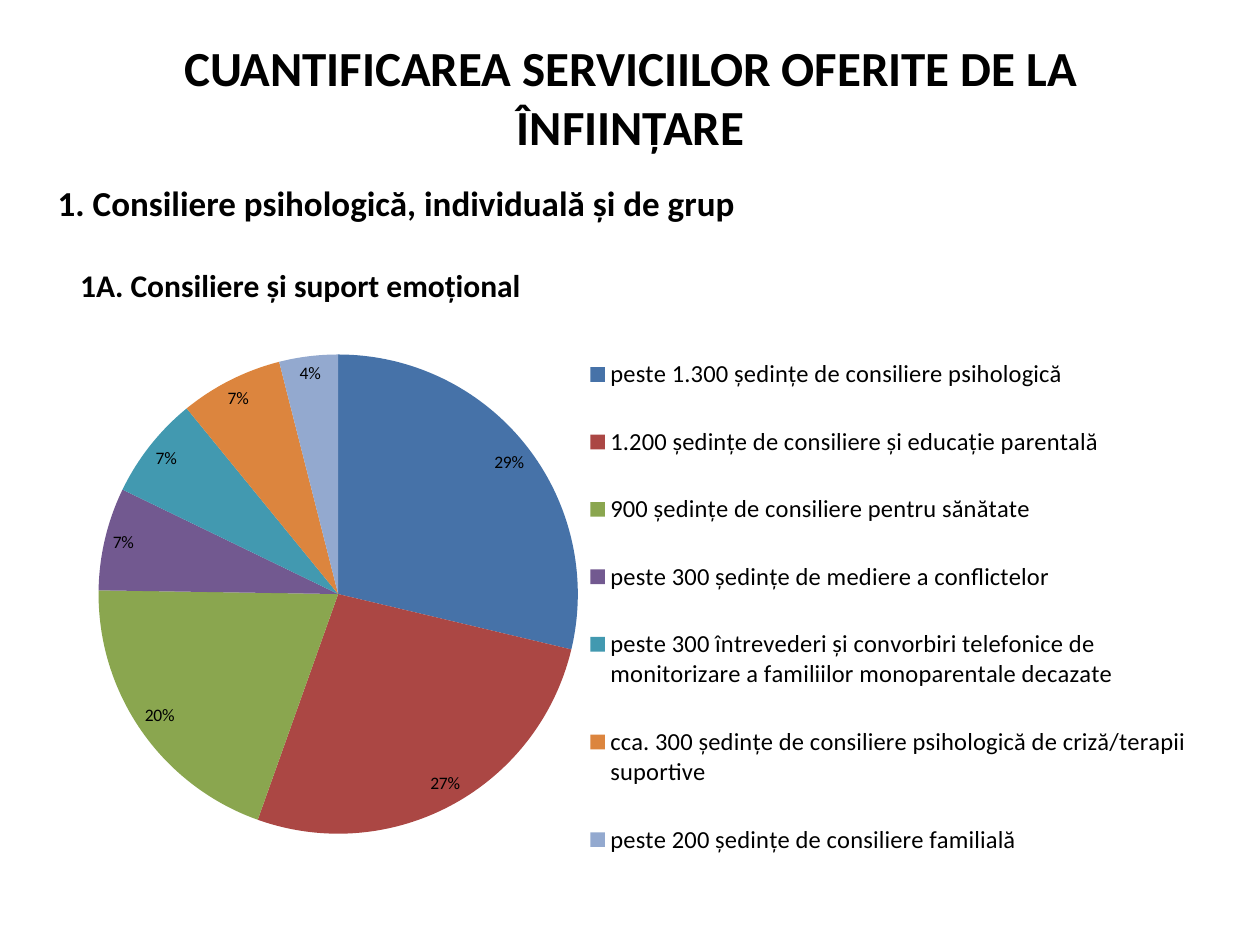
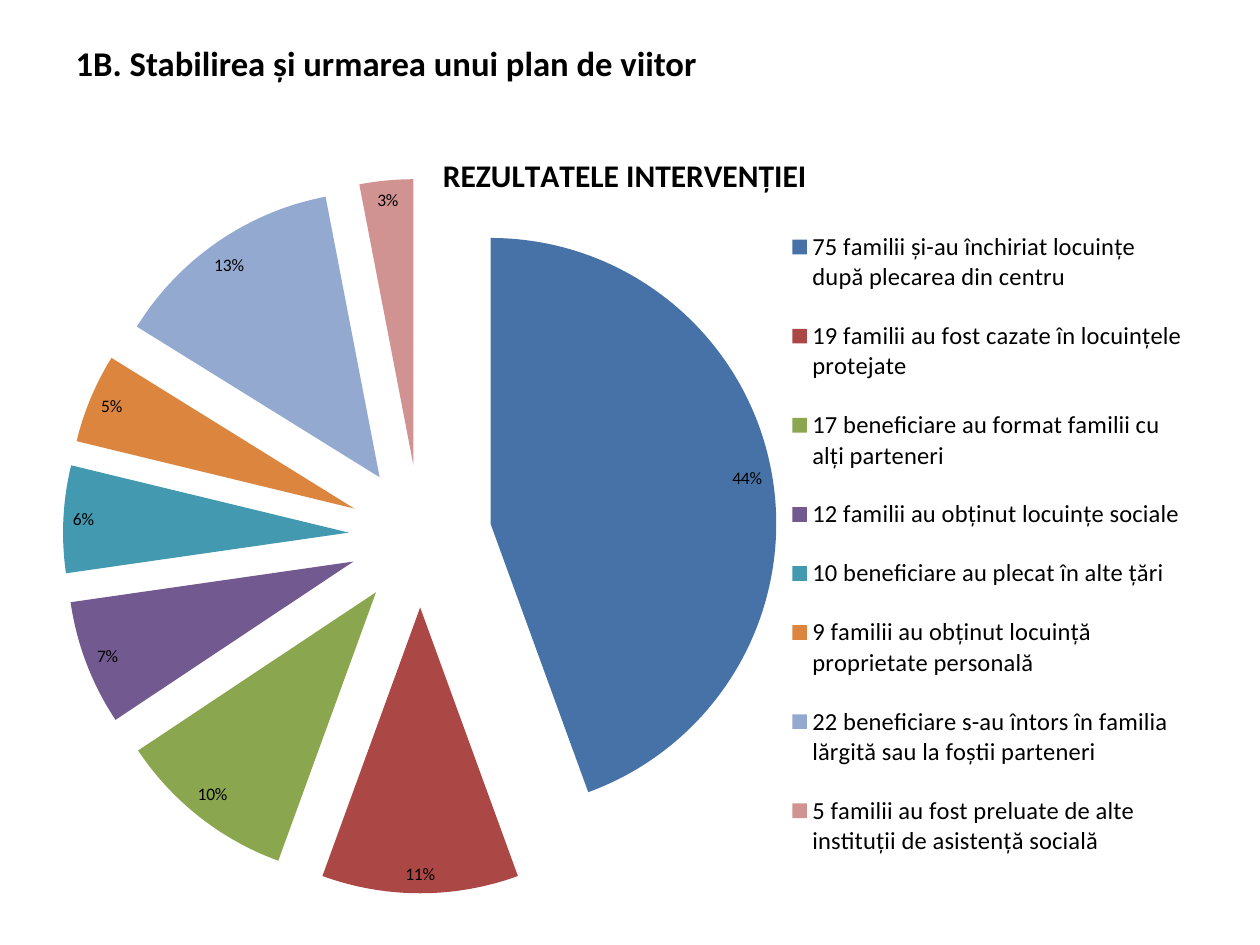
from dataclasses import dataclass

from lxml.etree import SubElement
from pptx import Presentation
from pptx.chart.data import CategoryChartData
from pptx.dml.color import RGBColor
from pptx.enum.chart import XL_CHART_TYPE, XL_LABEL_POSITION, XL_LEGEND_POSITION
from pptx.enum.lang import MSO_LANGUAGE_ID
from pptx.enum.text import MSO_ANCHOR, PP_ALIGN
from pptx.oxml.ns import qn
from pptx.util import Inches, Pt


@dataclass(frozen=True)
class Theme:
    font: str = "Calibri"
    text: str = "000000"
    slices: tuple = ("4672A8", "AB4744", "8AA64F", "725990",
                     "4299B0", "DC853E", "93A9CF", "D09392")
    title: float = 28
    small_title: float = 19.8
    heading: float = 20
    chart_title: float = 18
    legend: float = 14
    label: float = 10


THEME = Theme()

# Content: boxes are left, top, width, height in inches;
# chart layouts are fractions of the chart's frame
SLIDES = [
    {
        "title": "CUANTIFICAREA SERVICIILOR OFERITE DE LA ÎNFIINȚARE",
        "title_box": (0.51, 0.3, 8.99, 0.93),
        "title_size": THEME.title,
        "title_align": PP_ALIGN.CENTER,
        "heading": "1. Consiliere psihologică, individuală și de grup",
        "heading_box": (0.36, 1.39, 9.29, 0.45),
        "chart_title": "1A. Consiliere și suport emoțional",
        "chart_box": (0.59, 1.94, 8.91, 5.14),
        "chart_title_at": (0, 0.02),
        "plot": (0.02, 0.17, 0.43, 0.74),
        "legend": (0.45, 0.12, 0.55, 0.88),
        "explosion": 0,
        "shares": [
            ("peste 1.300 ședințe de consiliere psihologică", 29),
            ("1.200 ședințe de consiliere și educație parentală", 27),
            ("900 ședințe de consiliere pentru sănătate", 20),
            ("peste 300 ședințe de mediere a conflictelor", 7),
            ("peste 300 întrevederi și convorbiri telefonice de "
             "monitorizare a familiilor monoparentale decazate", 7),
            ("cca. 300 ședințe de consiliere psihologică de criză/terapii suportive", 7),
            ("peste 200 ședințe de consiliere familială", 4),
        ],
    },
    {
        "title": "1B. Stabilirea şi urmarea unui plan de viitor",
        "title_box": (0.5, 0.19, 9, 0.61),
        "title_size": THEME.small_title,
        "title_align": PP_ALIGN.LEFT,
        "chart_title": "REZULTATELE INTERVENȚIEI",
        "chart_box": (0.5, 0.99, 9, 6.22),
        "chart_title_at": (0.33, 0.03),
        "plot": (0, 0.05, 0.63, 0.95),
        "legend": (0.64, 0.1, 0.35, 0.87),
        "explosion": 25,
        "shares": [
            ("75 familii și-au închiriat locuințe după plecarea din centru", 44),
            ("19 familii au fost cazate în locuințele protejate", 11),
            ("17 beneficiare au format familii cu alți parteneri", 10),
            ("12 familii au obținut locuințe sociale", 7),
            ("10 beneficiare au plecat în alte țări", 6),
            ("9 familii au obținut locuință proprietate personală", 5),
            ("22 beneficiare s-au întors în familia lărgită sau la foștii parteneri", 13),
            ("5 familii au fost preluate de alte instituții de asistență socială", 3),
        ],
    },
]


def style_font(font, size, bold=False):
    font.name = THEME.font
    font.size = Pt(size)
    font.bold = bold
    font.color.rgb = RGBColor.from_string(THEME.text)


def write_text(shape, text, size, align):
    frame = shape.text_frame
    frame.word_wrap = True
    frame.text = text
    paragraph = frame.paragraphs[0]
    paragraph.alignment = align
    font = paragraph.runs[0].font
    style_font(font, size, bold=True)
    font.language_id = MSO_LANGUAGE_ID.ROMANIAN


def set_layout(element, fractions, before, inner=False):
    """Place a chart part by hand, ahead of its child called before."""
    for old in element.findall(qn("c:layout")):
        element.remove(old)
    layout = SubElement(element, qn("c:layout"))
    element.find(qn(before)).addprevious(layout)
    manual = SubElement(layout, qn("c:manualLayout"))
    settings = [("layoutTarget", "inner")] if inner else []
    settings += [("xMode", "edge"), ("yMode", "edge")]
    settings += zip("xywh", fractions)
    for name, value in settings:
        SubElement(manual, qn(f"c:{name}")).set("val", str(value))


def add_title(slide, content):
    title = slide.shapes.title
    title.left, title.top, title.width, title.height = map(Inches, content["title_box"])
    title.text_frame.vertical_anchor = MSO_ANCHOR.MIDDLE
    write_text(title, content["title"], content["title_size"], content["title_align"])


def add_pie(slide, content):
    data = CategoryChartData()
    data.categories = [label for label, _ in content["shares"]]
    data.add_series("Series 1", [share for _, share in content["shares"]])
    box = map(Inches, content["chart_box"])
    chart = slide.shapes.add_chart(XL_CHART_TYPE.PIE, *box, data).chart
    style_font(chart.font, THEME.label)

    # Title
    chart.has_title = True
    chart_title = chart.chart_title
    chart_title.text_frame.text = content["chart_title"]
    style_font(chart_title.text_frame.paragraphs[0].runs[0].font, THEME.chart_title, bold=True)
    chart_title.include_in_layout = False
    set_layout(chart_title._element, content["chart_title_at"], "c:overlay")

    # Legend
    chart.has_legend = True
    legend = chart.legend
    legend.position = XL_LEGEND_POSITION.RIGHT
    legend.include_in_layout = False
    style_font(legend.font, THEME.legend)
    set_layout(legend._element, content["legend"], "c:overlay")

    # Slices and percentages
    plot = chart.plots[0]
    plot.vary_by_categories = True
    series = plot.series[0]
    for index, color in enumerate(THEME.slices[:len(content["shares"])]):
        fill = series.points[index].format.fill
        fill.solid()
        fill.fore_color.rgb = RGBColor.from_string(color)
    if content["explosion"]:
        explosion = SubElement(series._element, qn("c:explosion"))
        explosion.set("val", str(content["explosion"]))
        series._element.find(qn("c:dPt")).addprevious(explosion)
    plot.has_data_labels = True
    labels = plot.data_labels
    labels.show_percentage = True
    labels.show_value = False
    labels.number_format = "0%"
    labels.number_format_is_linked = False
    labels.position = XL_LABEL_POSITION.BEST_FIT
    style_font(labels.font, THEME.label)
    set_layout(plot._element.getparent(), content["plot"], "c:pieChart", inner=True)


def main():
    presentation = Presentation()
    presentation.slide_width, presentation.slide_height = Inches(10), Inches(7.5)
    title_only = presentation.slide_layouts[5]
    for content in SLIDES:
        slide = presentation.slides.add_slide(title_only)
        add_title(slide, content)
        if "heading" in content:
            heading = slide.shapes.add_textbox(*map(Inches, content["heading_box"]))
            write_text(heading, content["heading"], THEME.heading, PP_ALIGN.LEFT)
        add_pie(slide, content)
    presentation.save("out.pptx")


if __name__ == "__main__":
    main()
